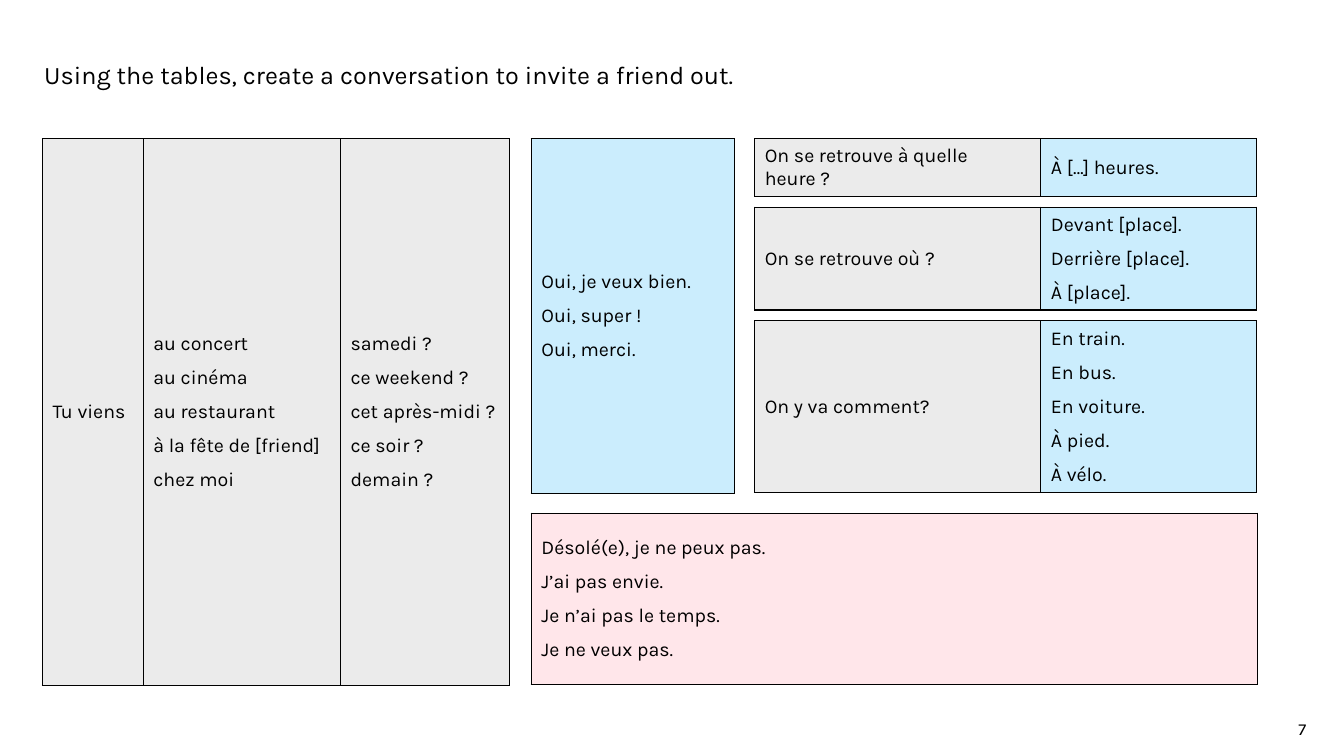
from dataclasses import dataclass

from lxml.etree import SubElement
from pptx import Presentation
from pptx.dml.color import RGBColor
from pptx.enum.text import MSO_ANCHOR, PP_ALIGN
from pptx.oxml.ns import qn
from pptx.util import Cm, Pt


@dataclass(frozen=True)
class Theme:
    font: str = "Karla"
    ink: str = "000000"
    question: str = "EBEBEB"
    accept: str = "CBEDFD"
    refuse: str = "FFE6EA"
    title_size: int = 18
    phrase_size: int = 14
    number_size: int = 12
    border: int = 1
    phrase_gap: int = 8


THEME = Theme()

# Layout in centimetres
TOP = 3.5
INVITATION_LEFT, REPLY_LEFT, DETAILS_LEFT = 1.07, 13.39, 19.02
DETAIL_WIDTHS = [7.21, 5.44]
DETAIL_GAP = 0.27

# Phrases: (fill, lines) for each column
INVITATION = [
    (THEME.question, ["Tu viens"]),
    (THEME.question, ["au concert", "au cinéma", "au restaurant",
                      "à la fête de [friend]", "chez moi"]),
    (THEME.question, ["samedi ?", "ce weekend ?", "cet après-midi ?",
                      "ce soir ?", "demain ?"]),
]
ACCEPTANCE = [(THEME.accept, ["Oui, je veux bien.", "Oui, super !", "Oui, merci."])]
REFUSAL = [(THEME.refuse, ["Désolé(e), je ne peux pas.", "J’ai pas envie.",
                           "Je n’ai pas le temps.", "Je ne veux pas."])]
# Height, question and answers of each arrangement
DETAILS = [
    (1.45, "On se retrouve à quelle heure ?", ["À […] heures."]),
    (2.59, "On se retrouve où ?",
     ["Devant [place].", "Derrière [place].", "À [place]."]),
    (4.34, "On y va comment?",
     ["En train.", "En bus.", "En voiture.", "À pied.", "À vélo."]),
]


def add_text(paragraph, text, size):
    run = paragraph.add_run()
    run.text = text
    run.font.name = THEME.font
    run.font.size = Pt(size)
    run.font.color.rgb = RGBColor.from_string(THEME.ink)


def add_borders(cell):
    properties = cell._tc.get_or_add_tcPr()
    for side in ("a:lnL", "a:lnR", "a:lnT", "a:lnB"):
        line = SubElement(properties, qn(side), w=str(Pt(THEME.border)))
        solid = SubElement(line, qn("a:solidFill"))
        SubElement(solid, qn("a:srgbClr"), val=THEME.ink)


def fill_cell(cell, fill, phrases):
    add_borders(cell)
    cell.fill.solid()
    cell.fill.fore_color.rgb = RGBColor.from_string(fill)
    cell.vertical_anchor = MSO_ANCHOR.MIDDLE
    frame = cell.text_frame
    for index, phrase in enumerate(phrases):
        paragraph = frame.add_paragraph() if index else frame.paragraphs[0]
        paragraph.space_after = Pt(THEME.phrase_gap)
        add_text(paragraph, phrase, THEME.phrase_size)


def add_phrase_table(slide, left, top, widths, height, columns):
    table = slide.shapes.add_table(1, len(widths), Cm(left), Cm(top),
                                   Cm(sum(widths)), Cm(height)).table
    table.first_row = False
    table.horz_banding = False
    for index, (width, (fill, phrases)) in enumerate(zip(widths, columns)):
        table.columns[index].width = Cm(width)
        fill_cell(table.cell(0, index), fill, phrases)


def add_title(slide, text):
    title = slide.shapes.title
    title.left, title.top = Cm(0.86), Cm(1.37)
    title.width, title.height = Cm(28.4), Cm(1.02)
    title.text_frame.vertical_anchor = MSO_ANCHOR.MIDDLE
    paragraph = title.text_frame.paragraphs[0]
    paragraph.alignment = PP_ALIGN.LEFT
    add_text(paragraph, text, THEME.title_size)


def add_page_number(slide, number):
    frame = slide.shapes.add_textbox(Cm(30.91), Cm(18.11), Cm(2.01), Cm(0.51)).text_frame
    frame.word_wrap = True
    frame.margin_left = frame.margin_right = frame.margin_top = frame.margin_bottom = 0
    paragraph = frame.paragraphs[0]
    paragraph.alignment = PP_ALIGN.RIGHT
    add_text(paragraph, number, THEME.number_size)


def add_details(slide):
    top = TOP
    for height, question, answers in DETAILS:
        columns = [(THEME.question, [question]), (THEME.accept, answers)]
        add_phrase_table(slide, DETAILS_LEFT, top, DETAIL_WIDTHS, height, columns)
        top += height + DETAIL_GAP


def main():
    presentation = Presentation()
    presentation.slide_width, presentation.slide_height = Cm(33.87), Cm(19.05)
    slide = presentation.slides.add_slide(presentation.slide_layouts[5])

    add_title(slide, "Using the tables, create a conversation to invite a friend out.")

    # Invitation, replies and arrangements
    add_phrase_table(slide, INVITATION_LEFT, TOP, [2.54, 4.97, 4.27], 13.77, INVITATION)
    add_phrase_table(slide, REPLY_LEFT, TOP, [5.11], 8.94, ACCEPTANCE)
    add_details(slide)
    add_phrase_table(slide, REPLY_LEFT, 12.93, [18.29], 4.32, REFUSAL)

    add_page_number(slide, "7")
    presentation.save("out.pptx")


if __name__ == "__main__":
    main()
